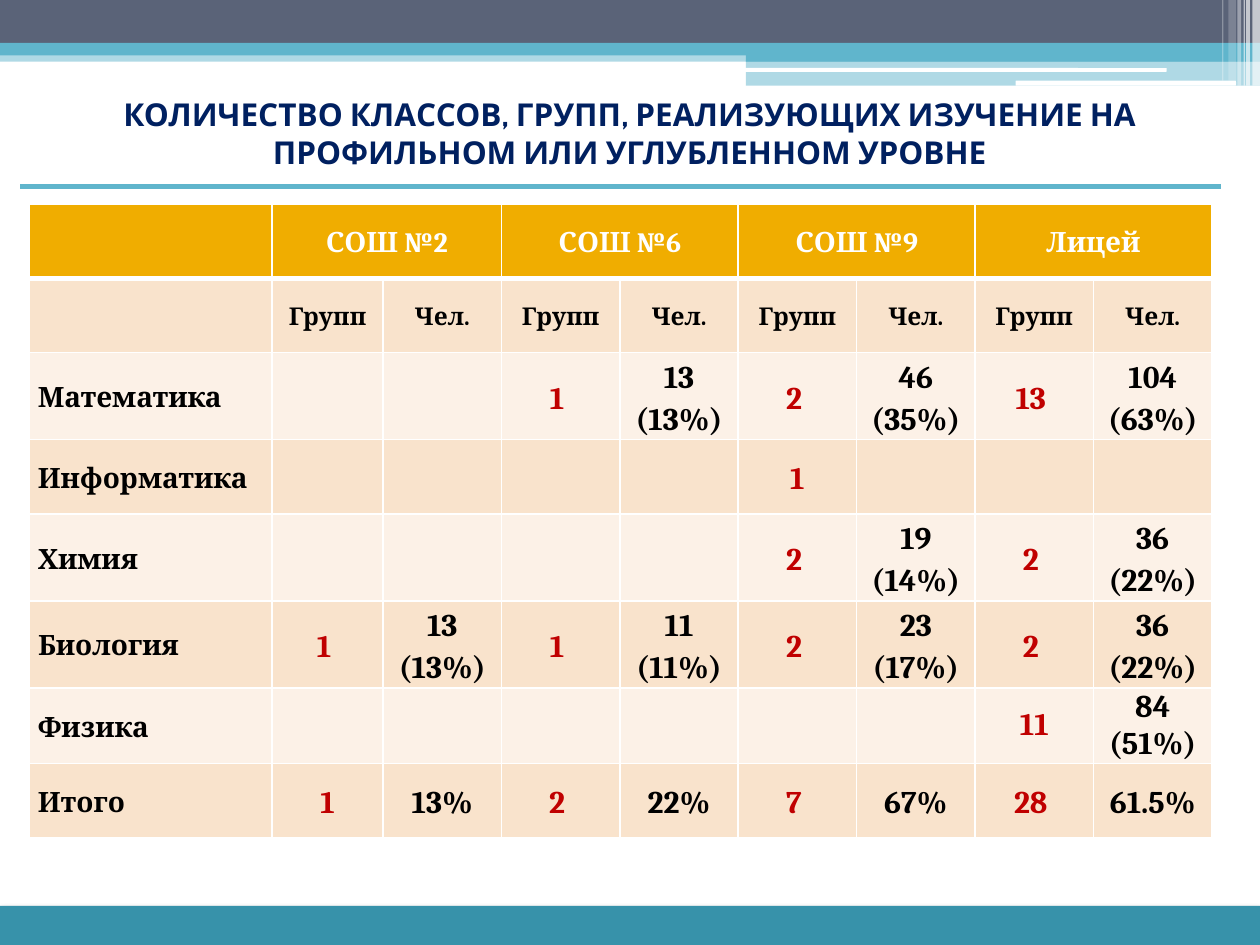
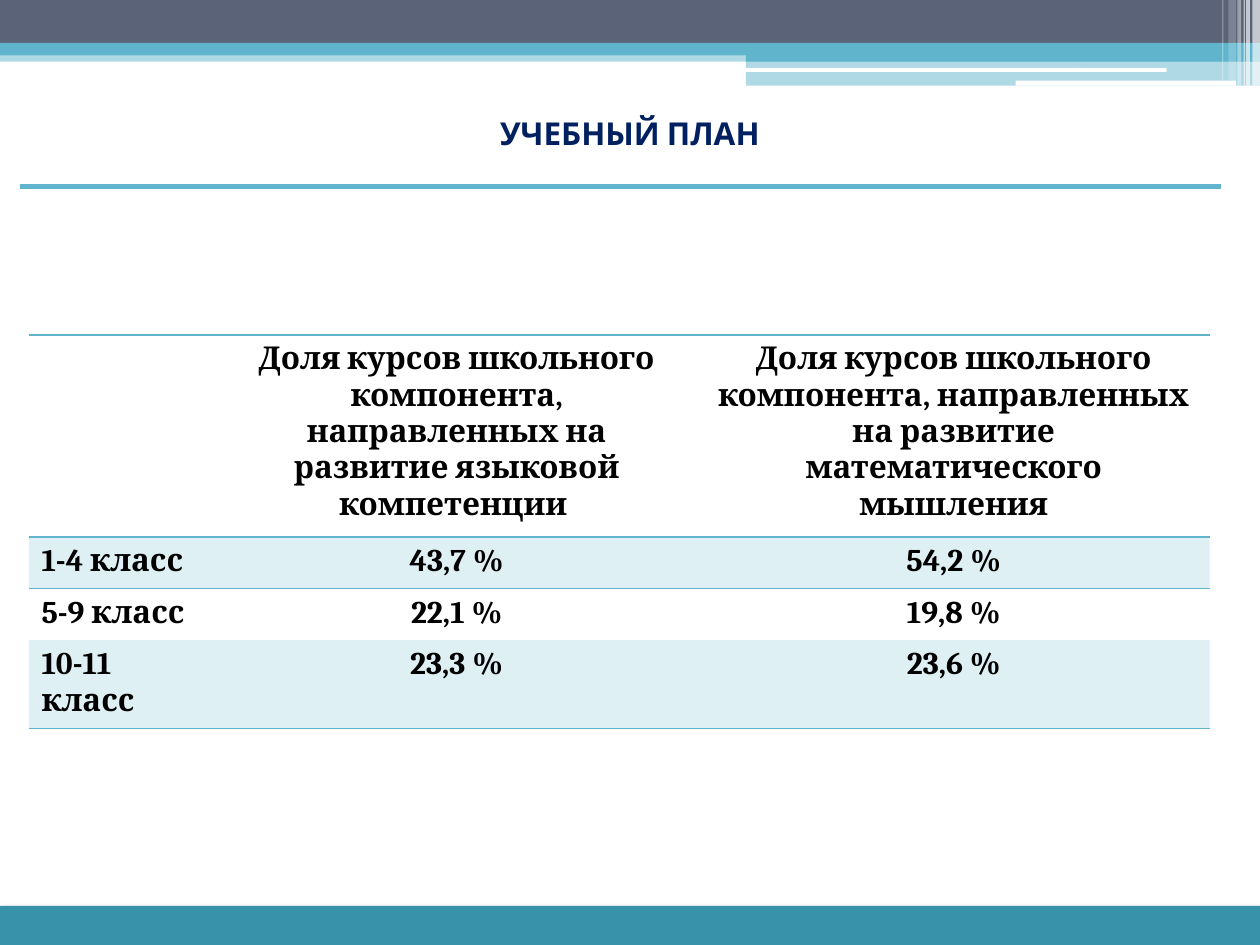
from lxml import etree
from pptx import Presentation
from pptx.dml.color import RGBColor
from pptx.enum import shapes, text
from pptx.oxml import ns
from pptx.util import Inches, Pt

TEAL = RGBColor(0x60, 0xB5, 0xCC)
SLATE = RGBColor(0x5A, 0x63, 0x78)
DEEP = RGBColor(0x37, 0x92, 0xAA)
NAVY = RGBColor(0x00, 0x20, 0x60)
GOLD = RGBColor(0xF0, 0xAD, 0x00)
PEACH = RGBColor(0xF9, 0xE3, 0xCC)
CREAM = RGBColor(0xFC, 0xF1, 0xE7)
RED = RGBColor(0xC0, 0x00, 0x00)
BLACK = RGBColor(0x00, 0x00, 0x00)
WHITE = RGBColor(0xFF, 0xFF, 0xFF)

LEFT, MID = text.PP_ALIGN.LEFT, text.PP_ALIGN.CENTER
RECT, ROUND = shapes.MSO_SHAPE.RECTANGLE, shapes.MSO_SHAPE.ROUNDED_RECTANGLE
PLAIN = "{2D5ABB26-0587-4C30-8999-92F81FD0307C}"

BANDS = [
    (RECT, 0, 0.4, 10, 0.09, TEAL, 50),
    (RECT, 0, 0, 10, 0.34, SLATE, 100),
    (RECT, 0, 0.34, 10, 0.1, TEAL, 100),
    (RECT, 5.92, 0.39, 4.08, 0.1, TEAL, 100),
    (RECT, 5.92, 0.48, 4.08, 0.2, TEAL, 50),
    (ROUND, 5.91, 0.54, 3.35, 0.03, WHITE, 100),
    (ROUND, 8.06, 0.64, 1.75, 0.04, WHITE, 100),
    (RECT, 9.94, 0, 0.06, 0.68, WHITE, 65),
    (RECT, 9.89, 0, 0.03, 0.68, WHITE, 65),
    (RECT, 9.87, 0, 0.01, 0.68, WHITE, 60),
    (RECT, 9.82, 0, 0.03, 0.68, WHITE, 40),
    (RECT, 9.75, 0, 0.06, 0.64, WHITE, 20),
    (RECT, 9.7, 0, 0.01, 0.64, WHITE, 30),
    (RECT, 0, 7.19, 10, 0.31, DEEP, 100),
]
TITLES = [
    "КОЛИЧЕСТВО КЛАССОВ, ГРУПП, РЕАЛИЗУЮЩИХ ИЗУЧЕНИЕ НА ПРОФИЛЬНОМ ИЛИ УГЛУБЛЕННОМ УРОВНЕ",
    "УЧЕБНЫЙ ПЛАН",
]
GROUPS = [
    ["", "СОШ №2", "", "СОШ №6", "", "СОШ №9", "", "Лицей", ""],
    [""] + ["Групп", "Чел."] * 4,
    ["Математика", "", "", "1 ", "13 (13%)", "2 ", "46 (35%)", "13 ", "104 (63%)"],
    ["Информатика", "", "", "", "", "1", "", "", ""],
    ["Химия", "", "", "", "", "2 ", "19 (14%)", "2 ", "36 (22%)"],
    ["Биология", "1 ", "13 (13%)", "1 ", "11 (11%)", "2 ", "23 (17%)", "2 ", "36 (22%)"],
    ["Физика", "", "", "", "", "", "", "11", "84 (51%)"],
    ["Итого", "1", "13%", "2 ", "22%", "7 ", "67%", "28 ", "61.5%"],
]
SHARES = [
    ["",
     "Доля курсов школьного компонента, направленных на развитие языковой компетенции ",
     "Доля курсов школьного компонента, направленных на развитие математического мышления"],
    ["1-4 класс", "43,7 %", "54,2 %"],
    ["5-9 класс", "22,1 %", "19,8 %"],
    ["10-11 класс", "23,3 %", "23,6 %"],
]


def paint(fill, color, alpha=100):
    fill.solid()
    fill.fore_color.rgb = color
    if alpha < 100:
        tone = fill._xPr.find(ns.qn("a:solidFill"))[0]
        etree.SubElement(tone, ns.qn("a:alpha"), val=str(alpha * 1000))


def write(cell, words, size, ink, align, edges):
    for side, (color, width) in edges.items():
        line = etree.SubElement(cell._tc.get_or_add_tcPr(), ns.qn("a:ln" + side), w=str(Pt(width)))
        solid = etree.SubElement(line, ns.qn("a:solidFill"))
        etree.SubElement(solid, ns.qn("a:srgbClr"), val=str(color))
    if words:
        para = cell.text_frame.paragraphs[0]
        para.alignment = align
        run = para.add_run()
        run.text = words
        for key, val in {"name": "Cambria", "size": Pt(size), "bold": True}.items():
            setattr(run.font, key, val)
        run.font.color.rgb = ink


deck = Presentation()
deck.slide_width, deck.slide_height = Inches(10), Inches(7.5)
pages = []

for title in TITLES:
    page = deck.slides.add_slide(deck.slide_layouts[6])
    pages.append(page)
    for kind, left, top, wide, high, color, alpha in BANDS:
        band = page.shapes.add_shape(kind, Inches(left), Inches(top), Inches(wide), Inches(high))
        band.shadow.inherit = False
        band.line.fill.background()
        paint(band.fill, color, alpha)

    glow = etree.SubElement(
        band._element.spPr.find(ns.qn("a:effectLst")), ns.qn("a:outerShdw"),
        blurRad=str(Pt(4)), dist=str(Pt(2)), dir="5400000", rotWithShape="0")
    shade = etree.SubElement(glow, ns.qn("a:srgbClr"), val=str(BLACK))
    etree.SubElement(shade, ns.qn("a:alpha"), val="45000")

    rule = page.shapes.add_connector(
        shapes.MSO_CONNECTOR.STRAIGHT, Inches(0.16), Inches(1.48), Inches(9.69), Inches(1.48))
    rule.line.color.rgb = TEAL
    rule.line.width = Pt(3)
    etree.SubElement(rule._element.spPr, ns.qn("a:effectLst"))

    frame = page.shapes.add_textbox(0, Inches(0.47), Inches(10), Inches(1.17)).text_frame
    frame.word_wrap = True
    frame.vertical_anchor = text.MSO_ANCHOR.MIDDLE
    para = frame.paragraphs[0]
    para.alignment = MID
    run = para.add_run()
    run.text = title
    for key, val in {"name": "Cabin", "size": Pt(18), "bold": True}.items():
        setattr(run.font, key, val)
    run.font.color.rgb = NAVY

grids = []
for page, rows, top, high, widths in [
    (pages[0], GROUPS, 1.62, 0.59, [1.93, 0.88] + [0.94] * 7),
    (pages[1], SHARES, 2.66, 0.41, [1.48, 3.83, 4.06]),
]:
    grid = page.shapes.add_table(
        len(rows), len(widths), Inches(0.23), Inches(top),
        Inches(sum(widths)), Inches(high * len(rows))).table
    grid._tbl.tblPr[0].text = PLAIN
    grid.first_row = grid.horz_banding = False
    for col, width in zip(grid.columns, widths):
        col.width = Inches(width)
    grids.append(grid)

count, share = grids
for left in range(1, 9, 2):
    count.cell(0, left).merge(count.cell(0, left + 1))

inset = {
    "vertical_anchor": text.MSO_ANCHOR.MIDDLE,
    "margin_left": Inches(0.07), "margin_right": Inches(0.07),
    "margin_top": 0, "margin_bottom": 0,
}
for r, row in enumerate(GROUPS):
    for c, words in enumerate(row):
        cell = count.cell(r, c)
        edges = {side: (WHITE, 1) for side in "LRTB"}
        if r == 0:
            edges["B"] = (WHITE, 3)
        if r == 1:
            edges["T"] = (WHITE, 3)
        if r < 2:
            size, ink = (16, WHITE) if r == 0 else (14, BLACK)
        else:
            size, ink = 18 if c else 16, RED if c % 2 else BLACK
        write(cell, words, size, ink, MID if c else LEFT, edges)
        paint(cell.fill, GOLD if r == 0 else PEACH if r % 2 else CREAM)
        for key, val in inset.items():
            setattr(cell, key, val)
        if words and (row[0] != "Физика" or c == 0):
            para = cell.text_frame.paragraphs[0]
            para.line_spacing, para.space_after = 1.15, Pt(10)

for r, row in enumerate(SHARES):
    for c, words in enumerate(row):
        cell = share.cell(r, c)
        sides = {0: "TB", 1: "T", 3: "B"}.get(r, "")
        write(cell, words, 18, BLACK, MID if c else LEFT, {side: (TEAL, 1) for side in sides})
        if r % 2:
            paint(cell.fill, TEAL, 20)
        else:
            cell.fill.background()

deck.save("out.pptx")
